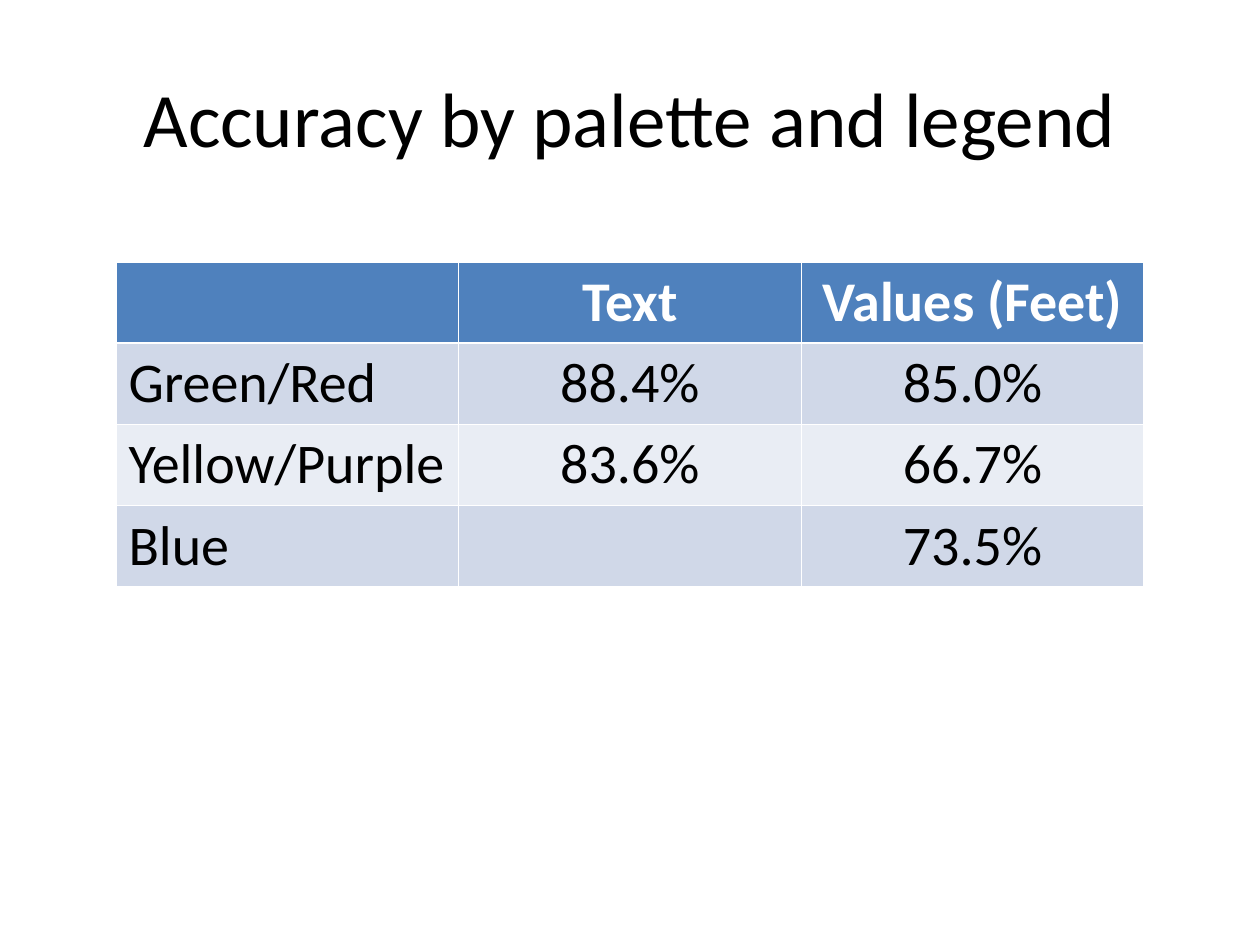
from pptx import Presentation
from pptx.dml.color import RGBColor
from pptx.enum import text
from pptx.util import Inches, Pt

TITLE = "Accuracy by palette and legend"
ROWS = [
    ("", "Text", "Values (Feet)"),
    ("Green/Red", "88.4%", "85.0%"),
    ("Yellow/Purple", "83.6%", "66.7%"),
    ("Blue", "", "73.5%"),
]
THEME = {
    "font": "Calibri",
    "title_size": 44,
    "table_size": 32,
    "ink": "000000",
    "header_ink": "FFFFFF",
    "header_fill": "4F81BD",
    "bands": ("D0D8E8", "E9EDF4"),
}
TITLE_BOX = {"left": 0.5, "top": 0.3, "width": 9, "height": 1.25}
TABLE_LEFT, TABLE_TOP = 0.92, 2.08
COLUMN_WIDTH, ROW_HEIGHT = 2.72, 0.64


def write(frame, words, size, color, align, bold=False):
    para = frame.paragraphs[0]
    para.alignment = align
    if not words:
        para.font.size = Pt(size)
        return
    span = para.add_run()
    span.text = words
    formats = {"name": THEME["font"], "size": Pt(size), "bold": bold}
    for name, value in formats.items():
        setattr(span.font, name, value)
    span.font.color.rgb = RGBColor.from_string(color)


def add_title(page):
    title = page.shapes.title
    for name, value in TITLE_BOX.items():
        setattr(title, name, Inches(value))
    title.text_frame.vertical_anchor = text.MSO_ANCHOR.MIDDLE
    write(title.text_frame, TITLE, THEME["title_size"], THEME["ink"],
          text.PP_ALIGN.CENTER)


def add_accuracy_table(page):
    """Add the table; its default style supplies the white rules."""
    row_count, column_count = len(ROWS), len(ROWS[0])
    table = page.shapes.add_table(
        row_count, column_count, Inches(TABLE_LEFT), Inches(TABLE_TOP),
        Inches(COLUMN_WIDTH * column_count), Inches(ROW_HEIGHT * row_count),
    ).table
    for row, values in enumerate(ROWS):
        header = row == 0
        fill = THEME["header_fill"] if header else THEME["bands"][(row - 1) % 2]
        ink = THEME["header_ink"] if header else THEME["ink"]
        for column, words in enumerate(values):
            cell = table.cell(row, column)
            cell.fill.solid()
            cell.fill.fore_color.rgb = RGBColor.from_string(fill)
            align = text.PP_ALIGN.CENTER if column else text.PP_ALIGN.LEFT
            write(cell.text_frame, words, THEME["table_size"], ink, align, header)


def main():
    deck = Presentation()
    deck.slide_width, deck.slide_height = Inches(10), Inches(7.5)
    page = deck.slides.add_slide(deck.slide_layouts.get_by_name("Title Only"))
    add_title(page)
    add_accuracy_table(page)
    deck.save("out.pptx")


if __name__ == "__main__":
    main()
